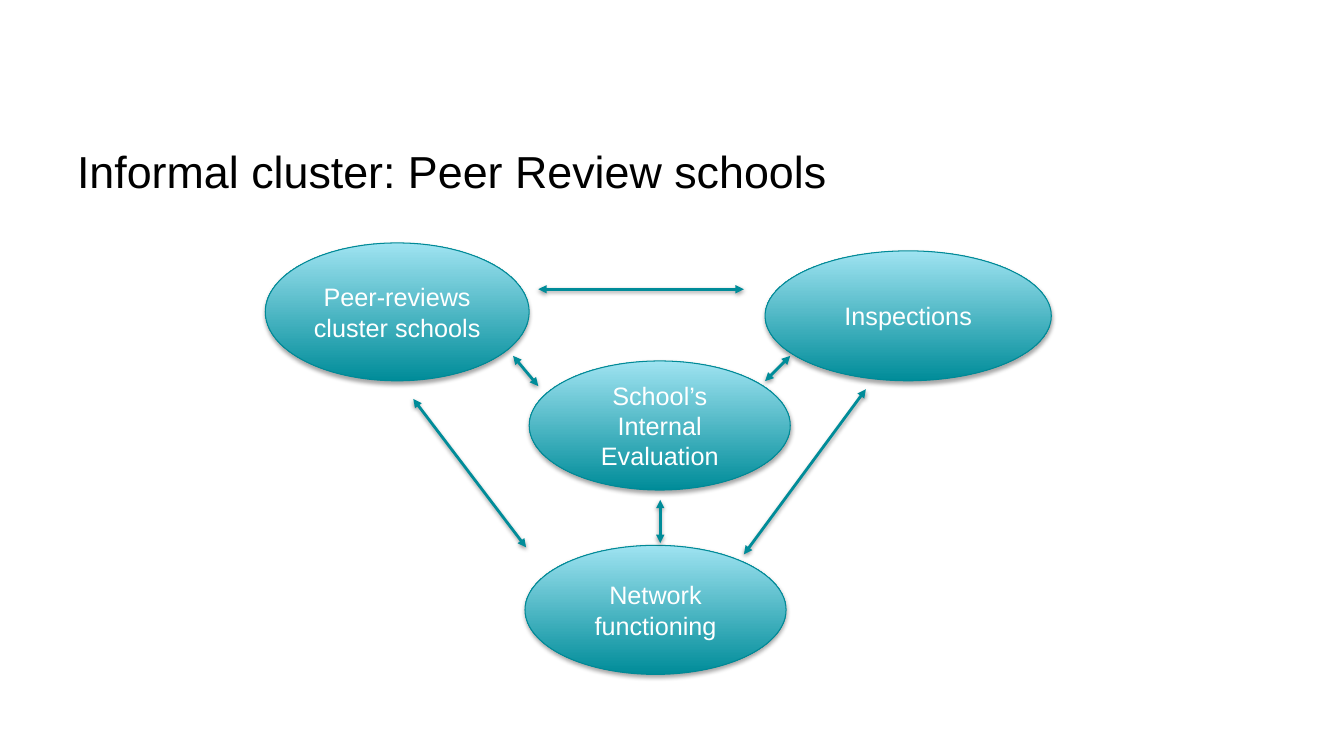
import dataclasses

import lxml.etree
import pptx
import pptx.dml.color
import pptx.enum.shapes
import pptx.enum.text
import pptx.oxml.ns
import pptx.shapes.base
import pptx.slide
import pptx.text.text
import pptx.util

COLORS: dict[str, str] = {
    "title": "000000",
    "label": "FFFFFF",
    "deep": "008C99",
    "pale": "9FE3F1",
    "outline": "008996",
    "shadow": "000000",
}
FONT = "Arial"


@dataclasses.dataclass(frozen=True)
class Activity:
    label: str
    left: float
    top: float
    width: float
    height: float


@dataclasses.dataclass(frozen=True)
class Influence:
    start: tuple[float, float]
    end: tuple[float, float]


ACTIVITIES = [
    Activity("Peer-reviews cluster schools", 189.5, 173.5, 188.5, 98.5),
    Activity("Inspections", 546.5, 179.2, 204.5, 92.8),
    Activity("Network functioning", 375, 389.5, 186.5, 92.2),
    Activity("School’s Internal Evaluation", 378, 257.8, 186.5, 92.2),
]

INFLUENCES = [
    Influence((295.2, 285), (375.8, 391)),
    Influence((618.5, 278), (531.4, 396)),
    Influence((531.4, 206.6), (384.5, 206.6)),
    Influence((366.5, 254.2), (384.5, 275.8)),
    Influence((564.5, 254.2), (546.5, 272.2)),
    Influence((471.6, 357), (471.6, 388)),
]


def rgb(name: str) -> pptx.dml.color.RGBColor:
    return pptx.dml.color.RGBColor.from_string(COLORS[name])


def add_child(parent: lxml.etree._Element, tag: str, **attributes: str) -> lxml.etree._Element:
    return lxml.etree.SubElement(parent, pptx.oxml.ns.qn(tag), **attributes)


def cast_shadow(
    effects: lxml.etree._Element, distance: float, opacity: int
) -> None:
    shadow = add_child(
        effects,
        "a:outerShdw",
        blurRad=str(pptx.util.Pt(3.1)),
        dist=str(pptx.util.Pt(distance)),
        dir=str(90 * 60000),
        rotWithShape="0",
    )
    tint = add_child(shadow, "a:srgbClr", val=COLORS["shadow"])
    add_child(tint, "a:alpha", val=str(opacity * 1000))


def write(
    frame: pptx.text.text.TextFrame, wording: str, size: float, color: str,
    layout: dict[str, object],
) -> None:
    frame.text = wording
    for name, value in {"word_wrap": True, **layout}.items():
        setattr(frame, name, value)
    font = frame.paragraphs[0].runs[0].font
    for name, value in {"name": FONT, "size": pptx.util.Pt(size)}.items():
        setattr(font, name, value)
    font.color.rgb = rgb(color)


def draw_title(slide: pptx.slide.Slide, wording: str) -> None:
    heading = slide.shapes.add_textbox(
        *map(pptx.util.Pt, (48, 99.4, 864, 70.6))
    )
    write(heading.text_frame, wording, 32, "title",
          {"vertical_anchor": pptx.enum.text.MSO_ANCHOR.TOP})


def draw_activity(slide: pptx.slide.Slide, activity: Activity) -> None:
    oval = slide.shapes.add_shape(
        pptx.enum.shapes.MSO_SHAPE.OVAL,
        *map(pptx.util.Pt, (activity.left, activity.top, activity.width, activity.height)),
    )
    oval.fill.gradient()
    oval.fill.gradient_angle = 90
    for stop, position, color in zip(oval.fill.gradient_stops, (0, 1), ("deep", "pale")):
        stop.position = position
        stop.color.rgb = rgb(color)
    oval.line.color.rgb = rgb("outline")
    oval.line.width = pptx.util.Pt(0.75)
    oval.shadow.inherit = False
    cast_shadow(oval._element.spPr.find(pptx.oxml.ns.qn("a:effectLst")), 1.8, 35)
    write(oval.text_frame, activity.label, 18, "label",
          {"vertical_anchor": pptx.enum.text.MSO_ANCHOR.MIDDLE})
    oval.text_frame.paragraphs[0].alignment = pptx.enum.text.PP_ALIGN.CENTER


def draw_influence(slide: pptx.slide.Slide, influence: Influence) -> None:
    arrow = slide.shapes.add_connector(
        pptx.enum.shapes.MSO_CONNECTOR.STRAIGHT,
        *map(pptx.util.Pt, (*influence.start, *influence.end)),
    )
    arrow.line.color.rgb = rgb("deep")
    arrow.line.width = pptx.util.Pt(2)
    for arrowhead in ("a:headEnd", "a:tailEnd"):
        add_child(arrow.line._get_or_add_ln(), arrowhead, type="triangle")
    cast_shadow(add_child(arrow._element.spPr, "a:effectLst"), 1.6, 38)


def main() -> None:
    deck = pptx.Presentation()
    deck.slide_width, deck.slide_height = pptx.util.Pt(960), pptx.util.Pt(540)
    slide = deck.slides.add_slide(deck.slide_layouts[6])
    draw_title(slide, "Informal cluster: Peer Review schools")
    for activity in ACTIVITIES:
        draw_activity(slide, activity)
    for influence in INFLUENCES:
        draw_influence(slide, influence)
    deck.save("out.pptx")


if __name__ == "__main__":
    main()
